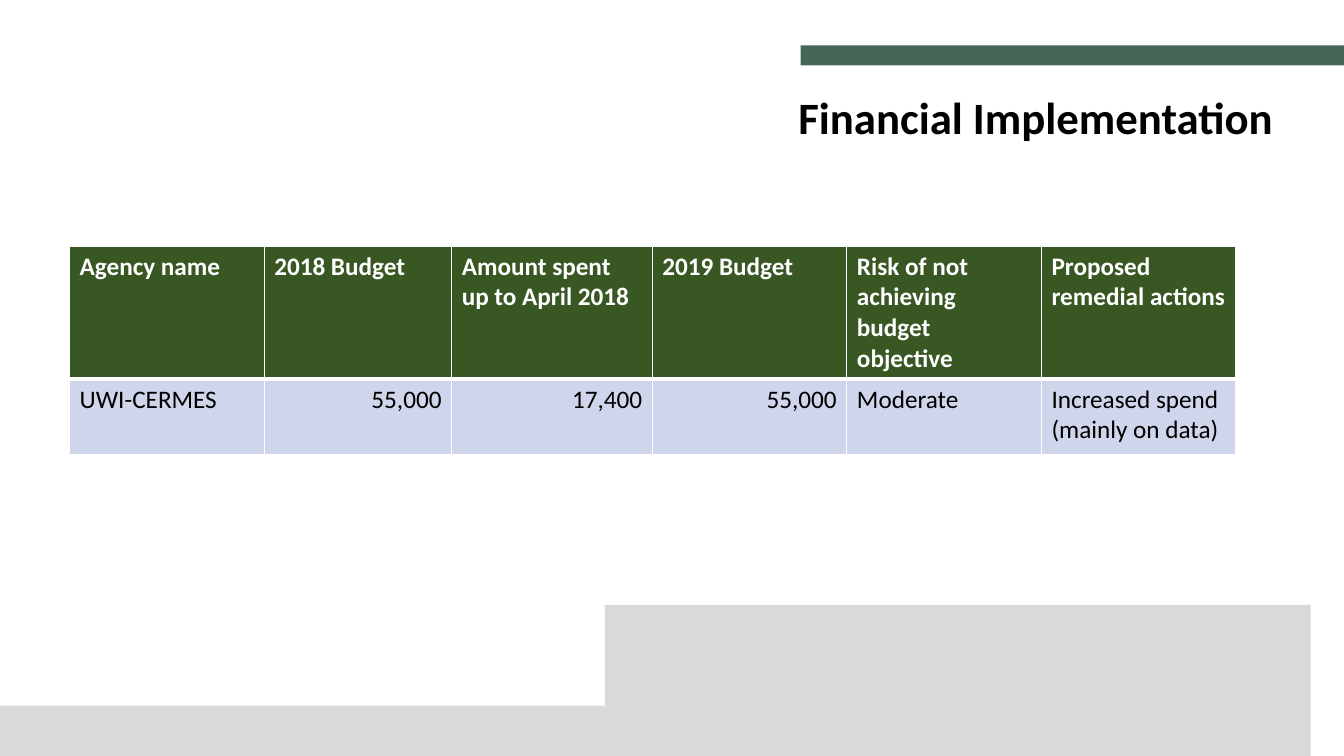
from lxml import etree
from pptx import Presentation, util as u
from pptx.dml.color import RGBColor
from pptx.enum import shapes, text
from pptx.oxml import ns

# Content
TITLE = "Financial Implementation"
ROWS = [
    ("Agency name", "2018 Budget", "Amount spent up to April 2018", "2019 Budget",
     "Risk of not achieving budget objective", "Proposed remedial actions"),
    ("UWI-CERMES", "55,000", "17,400", "55,000", "Moderate",
     "Increased spend (mainly on data)"),
]
COLORS = {"wave": "D9D9D9", "bar": "436655", "header": "385723",
          "body": "CFD5EA", "white": "FFFFFF", "black": "000000"}

# Layout in inches
WIDTH, HEIGHT = 13.33, 7.5
BAR_LEFT = 7.94
COLUMNS = [1.93, 1.86, 1.99, 1.93, 1.93, 1.93]
ROW_HEIGHTS = [1.25, 0.75]
WAVE_CURVES = [
    [(WIDTH, 6.46), (11.65, 6.22), (9.02, 6.16), (5.02, 6.63)],
    [(5.02, 6.63), (1.33, 7.07), (0.26, 6.68), (-0.02, 6.51)],
]
CURVE_STEPS = 40
HEADER_STYLE = {"name": "Calibri", "size": u.Pt(18), "bold": True}
BODY_STYLE = {**HEADER_STYLE, "bold": False}
TITLE_STYLE = {**HEADER_STYLE, "size": u.Pt(32)}


def rgb(name):
    return RGBColor.from_string(COLORS[name])


def paint(shape, color):
    shape.shadow.inherit = False
    shape.fill.solid()
    shape.fill.fore_color.rgb = rgb(color)
    shape.line.fill.background()


def write(frame, content, style, color, align=text.PP_ALIGN.LEFT):
    para = frame.paragraphs[0]
    para.alignment = align
    span = para.add_run()
    span.text = content
    for key, value in style.items():
        setattr(span.font, key, value)
    span.font.color.rgb = rgb(color)


def curve_point(curve, t):
    weights = ((1 - t) ** 3, 3 * t * (1 - t) ** 2, 3 * t * t * (1 - t), t ** 3)
    return tuple(sum(w * point[axis] for w, point in zip(weights, curve))
                 for axis in (0, 1))


def add_borders(cell, bottom):
    properties = cell._tc.get_or_add_tcPr()
    for side, points in (("L", 1), ("R", 1), ("T", 1), ("B", bottom)):
        line = etree.SubElement(properties, ns.qn(f"a:ln{side}"), w=str(u.Pt(points)))
        fill = etree.SubElement(line, ns.qn("a:solidFill"))
        etree.SubElement(fill, ns.qn("a:srgbClr"), val=COLORS["white"])


deck = Presentation()
deck.slide_width, deck.slide_height = u.Inches(WIDTH), u.Inches(HEIGHT)
page = deck.slides.add_slide(deck.slide_layouts[6])

# Wave along the foot
outline = [curve_point(curve, step / CURVE_STEPS)
           for curve in WAVE_CURVES for step in range(CURVE_STEPS + 1)]
outline.append((-0.02, HEIGHT))
builder = page.shapes.build_freeform(WIDTH, HEIGHT, scale=u.Inches(1))
builder.add_line_segments(outline, close=True)
paint(builder.convert_to_shape(), "wave")

# Bar above the title
bar = page.shapes.add_shape(shapes.MSO_SHAPE.RECTANGLE, u.Inches(BAR_LEFT),
                            u.Inches(0.45), u.Inches(WIDTH - BAR_LEFT), u.Inches(0.2))
paint(bar, "bar")

# Budget table
table = page.shapes.add_table(len(ROWS), len(COLUMNS), u.Inches(0.69), u.Inches(2.44),
                              u.Inches(sum(COLUMNS)), u.Inches(sum(ROW_HEIGHTS))).table
for column, width in zip(table.columns, COLUMNS):
    column.width = u.Inches(width)
for r, (row, height) in enumerate(zip(ROWS, ROW_HEIGHTS)):
    table.rows[r].height = u.Inches(height)
    header = r == 0
    for c, content in enumerate(row):
        cell = table.cell(r, c)
        add_borders(cell, 3 if header else 1)
        cell.fill.solid()
        cell.fill.fore_color.rgb = rgb("header" if header else "body")
        numeric = content.replace(",", "").isdigit()
        write(cell.text_frame, content, HEADER_STYLE if header else BODY_STYLE,
              "white" if header else "black",
              text.PP_ALIGN.RIGHT if numeric else text.PP_ALIGN.LEFT)

# Title
box = page.shapes.add_textbox(u.Inches(7.82), u.Inches(0.84), u.Inches(5.41), u.Inches(0.64))
box.text_frame.word_wrap = True
box.text_frame.auto_size = text.MSO_AUTO_SIZE.SHAPE_TO_FIT_TEXT
write(box.text_frame, TITLE, TITLE_STYLE, "black")

deck.save("out.pptx")
